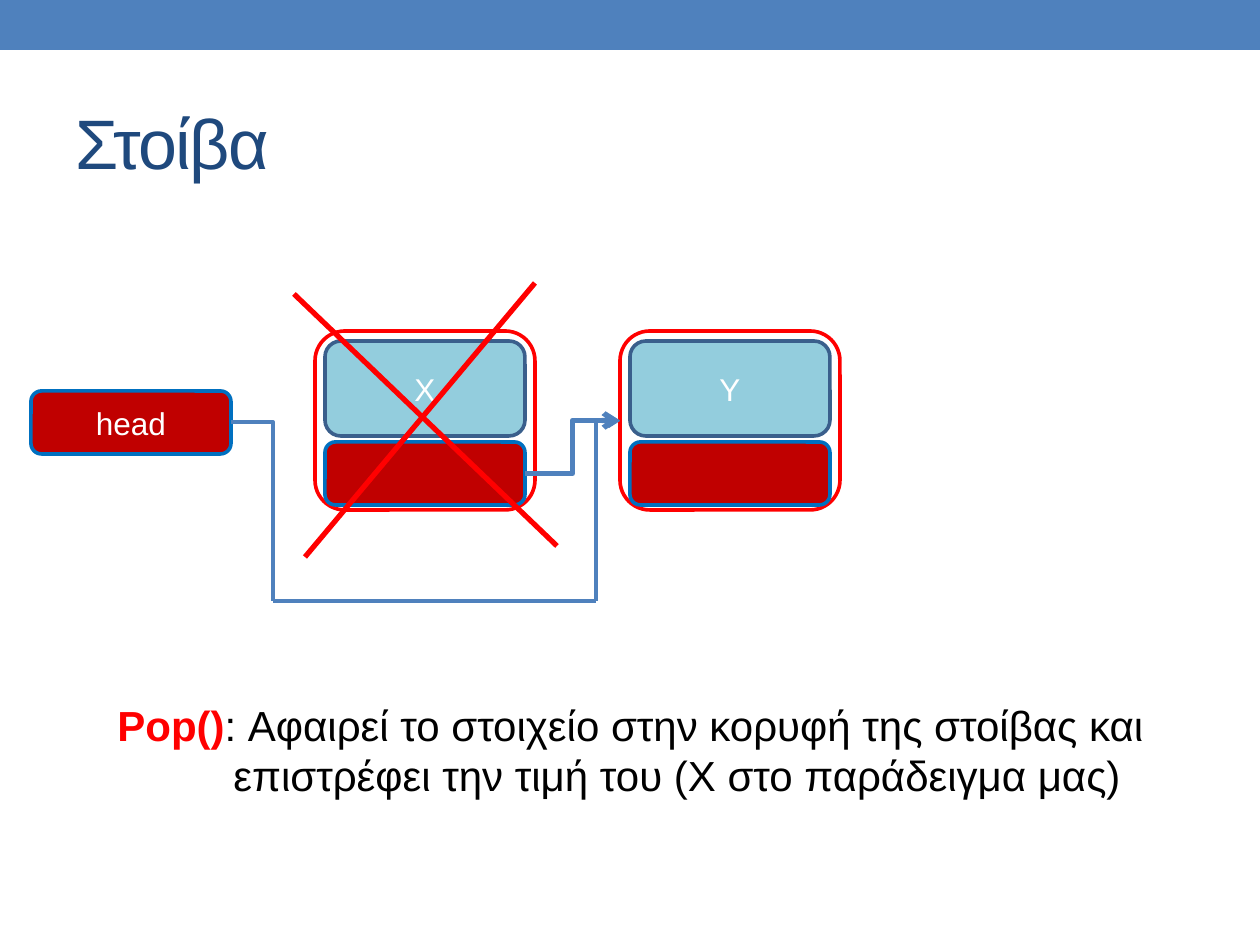
import lxml.etree
import pptx
import pptx.dml.color
import pptx.enum.shapes
import pptx.enum.text
import pptx.oxml.ns
import pptx.util

SHAPE = pptx.enum.shapes.MSO_SHAPE
LINE = pptx.enum.shapes.MSO_CONNECTOR
ALIGN = pptx.enum.text.PP_ALIGN
ANCHOR = pptx.enum.text.MSO_ANCHOR
qn = pptx.oxml.ns.qn
BLUE, RED, DARK_RED = "4F81BD", "FF0000", "C00000"
LINK_EDGE, VALUE_FILL, VALUE_EDGE = "0070C0", "93CDDD", "3A5F8C"


def px(length):
    return pptx.util.Emu(round(length * 914400 / 126))


def colour(value):
    return pptx.dml.color.RGBColor.from_string(value)


def style(run, size, hue, bold=False):
    run.font.name = "Arial"
    run.font.size = pptx.util.Pt(size)
    run.font.bold = bold
    run.font.color.rgb = colour(hue)


def add_box(shapes, box, fill=None, edge=None, label="", kind=SHAPE.ROUNDED_RECTANGLE):
    shape = shapes.add_shape(kind, *map(px, box))
    shape.shadow.inherit = False
    if fill:
        shape.fill.solid()
        shape.fill.fore_color.rgb = colour(fill)
    else:
        shape.fill.background()
    if edge:
        shape.line.color.rgb = colour(edge)
        shape.line.width = pptx.util.Pt(2.08)
    else:
        shape.line.fill.background()
    if label:
        frame = shape.text_frame
        frame.text = label
        frame.vertical_anchor = ANCHOR.MIDDLE
        frame.paragraphs[0].alignment = ALIGN.CENTER
        style(frame.paragraphs[0].runs[0], 18, "FFFFFF")
    return shape


def add_node(slide, left, value):
    group = slide.shapes.add_group_shape().shapes
    frame = add_box(group, (left, 331, 220, 179), edge=RED)
    link = add_box(group, (left + 10, 442, 200, 63), DARK_RED, LINK_EDGE)
    add_box(group, (left + 10, 341, 200, 95), VALUE_FILL, VALUE_EDGE, value)
    return frame, link


def add_line(slide, start, end, hue, width, kind=LINE.STRAIGHT, arrow=None, single_bend=False):
    line = slide.shapes.add_connector(kind, *map(px, start + end))
    line.line.color.rgb = colour(hue)
    line.line.width = pptx.util.Pt(width)
    properties = line._element.spPr
    if single_bend:
        properties.find(qn("a:prstGeom")).set("prst", "bentConnector2")
    if arrow:
        stroke = properties.find(qn("a:ln"))
        lxml.etree.SubElement(stroke, qn(arrow)).set("type", "arrow")
    lxml.etree.SubElement(properties, qn("a:effectLst"))
    return line


def add_title(slide, text):
    title = slide.shapes.title
    title.left, title.top, title.width, title.height = map(px, (63, 73, 1134, 136))
    title.text_frame.text = text
    title.text_frame.vertical_anchor = ANCHOR.MIDDLE
    paragraph = title.text_frame.paragraphs[0]
    paragraph.alignment = ALIGN.LEFT
    style(paragraph.runs[0], 40, "1F497D")
    paragraph.runs[0]._r.get_or_add_rPr().set("spc", "-100")


def add_explanation(slide, term, meaning, continuation):
    frame = slide.shapes.add_textbox(*map(px, (105, 693, 1075, 115))).text_frame
    frame.word_wrap = False
    frame.auto_size = pptx.enum.text.MSO_AUTO_SIZE.SHAPE_TO_FIT_TEXT
    first, second = frame.paragraphs[0], frame.add_paragraph()
    for paragraph, text, hue, bold in (
        (first, term, RED, True),
        (first, meaning, "000000", False),
        (second, continuation, "000000", False),
    ):
        run = paragraph.add_run()
        run.text = text
        style(run, 24, hue, bold)
    second._p.get_or_add_pPr().set("marL", str(int(px(116))))


def main():
    deck = pptx.Presentation()
    deck.slide_width, deck.slide_height = px(1260), px(945)
    slide = deck.slides.add_slide(deck.slide_layouts[5])
    add_box(slide.shapes, (0, 0, 1260, 50), BLUE, kind=SHAPE.RECTANGLE)
    add_title(slide, "Στοίβα")

    top_frame, top_link = add_node(slide, 315, "X")
    next_frame, next_link = add_node(slide, 620, "Y")
    successor = add_line(slide, (525, 474), (620, 421), BLUE, 3, LINE.ELBOW, "a:tailEnd")
    successor.begin_connect(top_link, 3)
    successor.end_connect(next_frame, 1)
    add_box(slide.shapes, (31, 391, 200, 63), DARK_RED, LINK_EDGE, "head")

    add_explanation(
        slide,
        "Pop()",
        ": Αφαιρεί το στοιχείο στην κορυφή της στοίβας και",
        "επιστρέφει την τιμή του (Χ στο παράδειγμα μας)",
    )
    add_line(slide, (535, 283), (305, 557), RED, 3)
    add_line(slide, (294, 294), (557, 546), RED, 3)

    add_line(slide, (231, 422), (273, 601), BLUE, 2.25, LINE.ELBOW, single_bend=True)
    add_line(slide, (273, 601), (596, 601), BLUE, 2.25)
    add_line(slide, (620, 421), (596, 601), BLUE, 2.25, LINE.ELBOW, "a:headEnd", True)
    deck.save("out.pptx")


if __name__ == "__main__":
    main()
